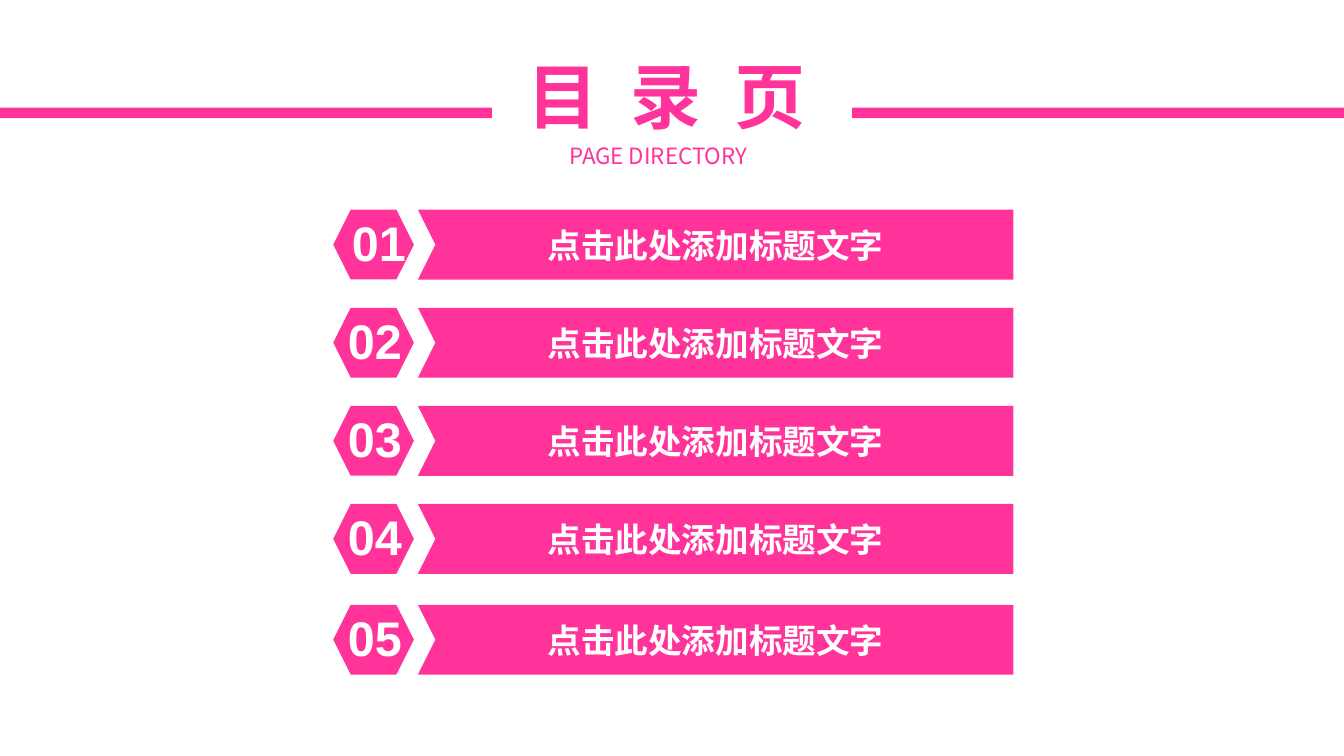
from lxml import etree
from pptx import Presentation
from pptx.dml.color import RGBColor
from pptx.enum import shapes, text
from pptx.oxml.ns import qn
from pptx.util import Inches, Pt

PINK = RGBColor(0xFF, 0x33, 0x99)
WHITE = RGBColor(0xFF, 0xFF, 0xFF)
SANS = "Noto Sans CJK SC"
LABEL = "点击此处添加标题文字"
HIGH = 0.52
# top of each row, left of its number
ROWS = [(1.56, 2.52), (2.29, 2.49), (3.02, 2.49), (3.75, 2.49), (4.5, 2.49)]


def paint(shape):
    shape.shadow.inherit = False
    shape.fill.solid()
    shape.fill.fore_color.rgb = PINK
    shape.line.fill.background()


def write(frame, words, size, color, face=SANS, bold=True, center=True, gap=0):
    """Fill a frame with one line; gap is extra letter spacing in points."""
    frame.vertical_anchor = text.MSO_ANCHOR.MIDDLE
    par = frame.paragraphs[0]
    par.text = words
    par.alignment = text.PP_ALIGN.CENTER if center else text.PP_ALIGN.LEFT
    font = par.font
    font.size = Pt(size)
    font.bold = bold
    font.color.rgb = color
    font.name = face
    props = par._p.pPr.find(qn("a:defRPr"))
    etree.SubElement(props, qn("a:ea")).set("typeface", face)
    if gap:
        props.set("spc", str(int(gap * 100)))


def add_text(slide, left, top, width, height, *args, **style):
    box = slide.shapes.add_textbox(
        Inches(left), Inches(top), Inches(width), Inches(height))
    frame = box.text_frame
    frame.word_wrap = False
    frame.margin_top = frame.margin_bottom = 0
    write(frame, *args, **style)


def add_block(slide, kind, left, top, width, height):
    paint(slide.shapes.add_shape(
        kind, Inches(left), Inches(top), Inches(width), Inches(height)))


def add_banner(slide, left, top):
    """Draw a bar with a notch in its left side."""
    right, low = 7.54, top + HIGH
    edge = [(right, top), (right, low), (left, low),
            (left + 0.13, top + HIGH / 2)]
    build = slide.shapes.build_freeform(Inches(left), Inches(top))
    build.add_line_segments([(Inches(x), Inches(y)) for x, y in edge])
    bar = build.convert_to_shape()
    paint(bar)
    write(bar.text_frame, LABEL, 18, WHITE)


def add_row(slide, num, top, left):
    add_banner(slide, 3.11, top)
    add_block(slide, shapes.MSO_SHAPE.HEXAGON, 2.48, top, 0.6, HIGH)
    add_text(slide, left, top - 0.03, 0.61, 0.54, f"{num:02}", 26, WHITE,
             face="Arial", center=False)


def add_head(slide):
    for left in (0, 6.34):
        add_block(slide, shapes.MSO_SHAPE.RECTANGLE, left, 0.8, 3.66, 0.08)
    add_text(slide, 3.74, 0.34, 2.44, 0.74, "目 录 页", 38, PINK, gap=4.5)
    add_text(slide, 4.1, 1.01, 1.6, 0.3, "PAGE DIRECTORY", 12, PINK,
             bold=False)


def main():
    deck = Presentation()
    deck.slide_width = Inches(10)
    deck.slide_height = deck.slide_width * 9 // 16
    slide = deck.slides.add_slide(deck.slide_layouts[6])
    add_head(slide)
    for num, (top, left) in enumerate(ROWS, 1):
        add_row(slide, num, top, left)
    deck.save("out.pptx")


if __name__ == "__main__":
    main()
